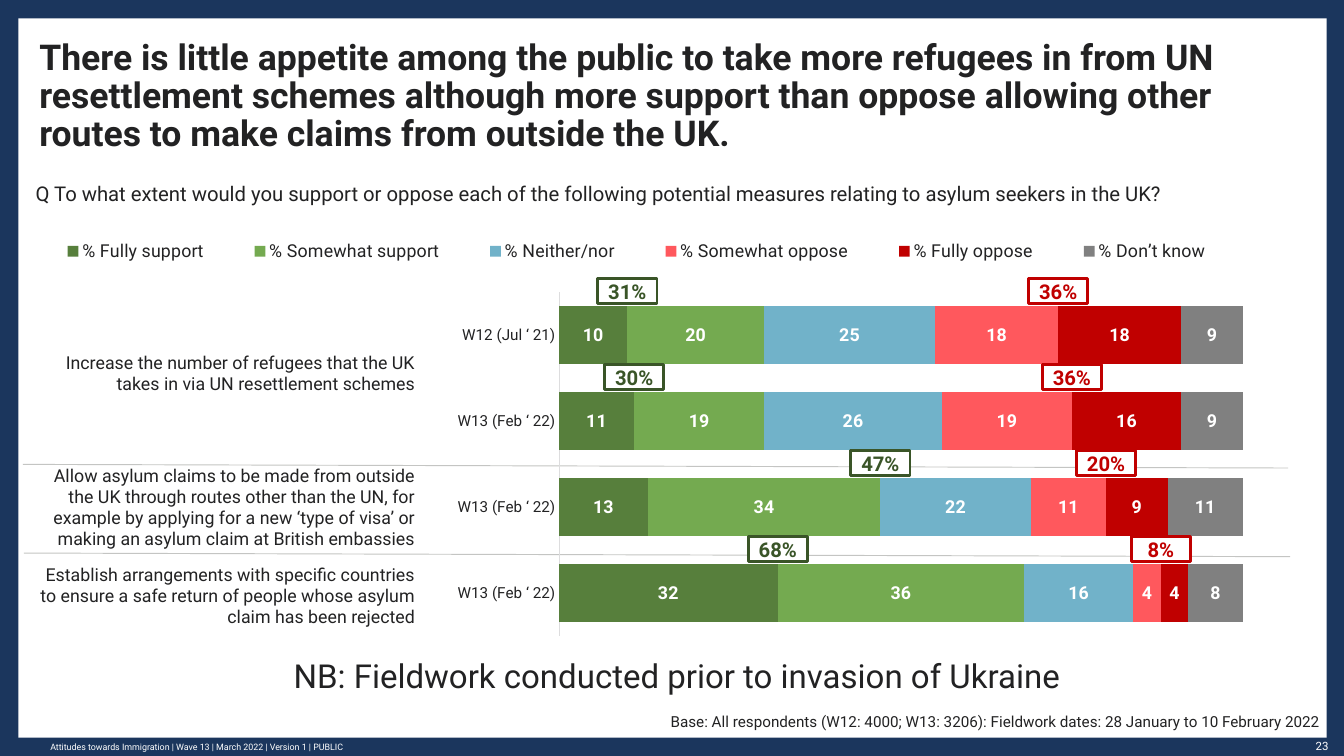
from dataclasses import dataclass

from pptx import Presentation
from pptx.chart.data import CategoryChartData
from pptx.dml.color import RGBColor
from pptx.enum.chart import XL_CHART_TYPE as ChartType, XL_LEGEND_POSITION as LegendPos
from pptx.enum.chart import XL_TICK_MARK as TickMark
from pptx.enum.shapes import MSO_CONNECTOR as Connector, MSO_SHAPE as Shape
from pptx.enum.text import MSO_ANCHOR as Anchor, PP_ALIGN as Align
from pptx.oxml import parse_xml
from pptx.oxml.ns import nsdecls
from pptx.oxml.xmlchemy import OxmlElement
from pptx.util import Inches, Pt


@dataclass(frozen=True)
class Theme:
    font: str = "Roboto"
    navy: str = "1B365D"
    white: str = "FFFFFF"
    ink: str = "222223"
    divider: str = "C4C5C3"
    axis: str = "DDDDDE"
    support: str = "3A5528"
    oppose: str = "C00000"
    title: float = 28
    note: float = 26
    body: float = 16
    label: float = 14
    small: float = 12
    page: float = 9
    footer: float = 7


THEME = Theme()
WIDTH, HEIGHT = Inches(14.7), Inches(8.27)

# Grid of 100 columns by 100 rows; every box is (column, row, columns, rows)
CHART_BOX = (1.7, 30.47, 93.2, 55.62)
PLOT = (0.428, 0.147, 0.546, 0.818)  # shares of the chart
LEGEND = (0, 0.01, 0.98, 0.08)
BADGE_SIZE = (4.42, 3.26)
BADGE_RISE = 1.77

WAVES = ["W12 (Jul ‘ 21)", "W13 (Feb ‘ 22)", "W13 (Feb ‘ 22)", "W13 (Feb ‘ 22)"]
ANSWERS = [
    ("% Fully support", (10, 11, 13, 32), "577F3C"),
    ("% Somewhat support", (20, 19, 34, 36), "74AA50"),
    ("% Neither/nor", (25, 26, 22, 16), "71B2C9"),
    ("% Somewhat oppose", (18, 19, 11, 4), "FF585D"),
    ("% Fully oppose", (18, 16, 9, 4), "C00000"),
    ("% Don’t know", (9, 9, 11, 8), "808080"),
]
# For each bar: (total, number of answers to the left of its badge)
SUPPORT_TOTALS = [("31%", 1), ("30%", 1), ("47%", 2), ("68%", 1)]
OPPOSE_TOTALS = [("36%", 4), ("36%", 4), ("20%", 4), ("8%", 4)]
MEASURES = [
    ("Increase the number of refugees that the UK takes in via UN resettlement schemes", 10.52),
    ("", 6.53),
    ("Allow asylum claims to be made from outside the UK through routes other than the UN, "
     "for example by applying for a new ‘type of visa’ or making an asylum claim at British "
     "embassies", 11.73),
    ("Establish arrangements with specific countries to ensure a safe return of people whose "
     "asylum claim has been rejected", 11.73),
]


def across(columns):
    return round(WIDTH * columns / 100)


def down(rows):
    return round(HEIGHT * rows / 100)


def place(box):
    left, top, width, height = box
    return across(left), down(top), across(width), down(height)


def style_font(font, size, color=THEME.ink, bold=False):
    font.name, font.size, font.bold = THEME.font, Pt(size), bold
    font.color.rgb = RGBColor.from_string(color)


def write(frame, text, size, color=THEME.ink, bold=False, align=Align.LEFT, spacing=None):
    frame.text = text
    frame.word_wrap = True
    paragraph = frame.paragraphs[0]
    paragraph.alignment = align
    paragraph.line_spacing = spacing
    for run in paragraph.runs:
        style_font(run.font, size, color, bold)


def set_insets(holder, inset=0):
    holder.margin_left = holder.margin_right = inset
    holder.margin_top = holder.margin_bottom = inset


def add_text(slide, box, text, size, anchor=Anchor.TOP, **style):
    frame = slide.shapes.add_textbox(*place(box)).text_frame
    set_insets(frame)
    frame.vertical_anchor = anchor
    write(frame, text, size, **style)


def add_white_box(slide, box):
    white_box = slide.shapes.add_shape(Shape.RECTANGLE, *place(box))
    white_box.shadow.inherit = False
    white_box.fill.solid()
    white_box.fill.fore_color.rgb = RGBColor.from_string(THEME.white)
    white_box.line.fill.background()
    return white_box


def add_badge(slide, bar, total, answers_before, color):
    chart_left, chart_top, chart_width, chart_height = CHART_BOX
    plot_left, plot_top, plot_width, plot_height = PLOT
    width, height = BADGE_SIZE
    share = sum(values[bar] for _, values, _ in ANSWERS[:answers_before]) / 100
    center = chart_left + chart_width * (plot_left + plot_width * share)
    band_top = chart_top + chart_height * (plot_top + plot_height * bar / len(WAVES))
    badge = add_white_box(slide, (center - width / 2, band_top - BADGE_RISE, width, height))
    badge.line.color.rgb = RGBColor.from_string(color)
    badge.line.width = Pt(2.25)
    set_insets(badge.text_frame)
    badge.text_frame.vertical_anchor = Anchor.MIDDLE
    write(badge.text_frame, total, THEME.body, color, bold=True, align=Align.CENTER)


def add_divider(slide, left, top, right, bottom):
    divider = slide.shapes.add_connector(
        Connector.STRAIGHT, across(left), down(top), across(right), down(bottom))
    divider.line.color.rgb = RGBColor.from_string(THEME.divider)
    divider.line.width = Pt(0.75)
    divider._element.spPr.append(OxmlElement("a:effectLst"))


def add_measures(slide):
    height = sum(rows for _, rows in MEASURES)
    table = slide.shapes.add_table(len(MEASURES), 1, *place((2.86, 44.26, 28.1, height))).table
    table.first_row = table.horz_banding = False
    for row, (measure, rows) in zip(table.rows, MEASURES):
        row.height = down(rows)
        cell = row.cells[0]
        cell.fill.background()
        set_insets(cell, Inches(0.01))
        cell.vertical_anchor = Anchor.MIDDLE
        write(cell.text_frame, measure, THEME.label, align=Align.RIGHT)


def manual_layout(shares, inner=False):
    target = '<c:layoutTarget val="inner"/>' if inner else ""
    modes = "".join(f'<c:{axis}Mode val="edge"/>' for axis in "xy")
    sizes = "".join(f'<c:{side} val="{share}"/>' for side, share in zip("xywh", shares))
    return parse_xml(f'<c:layout {nsdecls("c")}><c:manualLayout>{target}{modes}{sizes}'
                     "</c:manualLayout></c:layout>")


def add_answers_chart(slide):
    data = CategoryChartData(number_format="0")
    data.categories = WAVES
    for answer, values, _ in ANSWERS:
        data.add_series(answer, values)
    chart = slide.shapes.add_chart(ChartType.BAR_STACKED_100, *place(CHART_BOX), data).chart
    chart.has_title = False
    style_font(chart.font, 10)

    # Bars and their values
    bars = chart.plots[0]
    bars.gap_width, bars.overlap, bars.vary_by_categories = 50, 100, False
    for series, (_, _, color) in zip(bars.series, ANSWERS):
        series.format.fill.solid()
        series.format.fill.fore_color.rgb = RGBColor.from_string(color)
        series.data_labels.show_value = True
        style_font(series.data_labels.font, THEME.label, THEME.white, bold=True)

    # Axes
    waves, percent = chart.category_axis, chart.value_axis
    waves.reverse_order = True
    waves.major_tick_mark = waves.minor_tick_mark = TickMark.NONE
    waves.format.line.color.rgb = RGBColor.from_string(THEME.axis)
    waves.format.line.width = Pt(0.75)
    style_font(waves.tick_labels.font, THEME.small)
    percent.visible = percent.has_major_gridlines = False
    percent.minimum_scale, percent.maximum_scale, percent.major_unit = 0, 1, 0.2

    # Legend and plot positions
    chart.has_legend = True
    chart.legend.position = LegendPos.TOP
    chart.legend.include_in_layout = False
    style_font(chart.legend.font, THEME.label)
    for part, index, layout in (("plotArea", 0, manual_layout(PLOT, inner=True)),
                                ("legend", 1, manual_layout(LEGEND))):
        element = chart._chartSpace.xpath(f"c:chart/c:{part}")[0]
        for automatic in element.xpath("c:layout"):
            element.remove(automatic)
        element.insert(index, layout)


def main():
    deck = Presentation()
    deck.slide_width, deck.slide_height = WIDTH, HEIGHT
    slide = deck.slides.add_slide(deck.slide_layouts[6])

    # Frame and footer
    slide.background.fill.solid()
    slide.background.fill.fore_color.rgb = RGBColor.from_string(THEME.navy)
    add_white_box(slide, (1.36, 2.42, 97.35, 95.16))
    add_text(slide, (95.65, 97.82, 3.2, 2.06), "23", THEME.page,
             color=THEME.white, align=Align.RIGHT)
    add_text(slide, (3.74, 97.58, 36.4, 2.42),
             "Attitudes towards Immigration | Wave 13 | March 2022 | Version 1 | PUBLIC",
             THEME.footer, Anchor.MIDDLE, color=THEME.white)

    # Title and question
    add_text(slide, (2.93, 10.16, 94.15, 10.28),
             "There is little appetite among the public to take more refugees in from UN "
             "resettlement schemes although more support than oppose allowing other routes "
             "to make claims from outside the UK.",
             THEME.title, Anchor.BOTTOM, bold=True, spacing=0.9)
    add_text(slide, (2.65, 23.94, 93.2, 6.53),
             "Q To what extent would you support or oppose each of the following potential "
             "measures relating to asylum seekers in the UK?", THEME.body)

    # Measures, answers and totals
    add_measures(slide)
    add_divider(slide, 1.7, 61.43, 95.85, 61.91)
    add_divider(slide, 1.77, 73.16, 95.99, 73.64)
    add_answers_chart(slide)
    for totals, color in ((SUPPORT_TOTALS, THEME.support), (OPPOSE_TOTALS, THEME.oppose)):
        for bar, (total, answers_before) in enumerate(totals):
            add_badge(slide, bar, total, answers_before, color)

    # Notes under the chart
    add_text(slide, (21.84, 86.7, 58.3, 5.32),
             "NB: Fieldwork conducted prior to invasion of Ukraine", THEME.note)
    add_text(slide, (46.26, 94.2, 51.97, 2.42),
             "Base: All respondents (W12: 4000; W13: 3206): Fieldwork dates: "
             "28 January to 10 February 2022", THEME.small, align=Align.RIGHT)

    deck.save("out.pptx")


if __name__ == "__main__":
    main()
